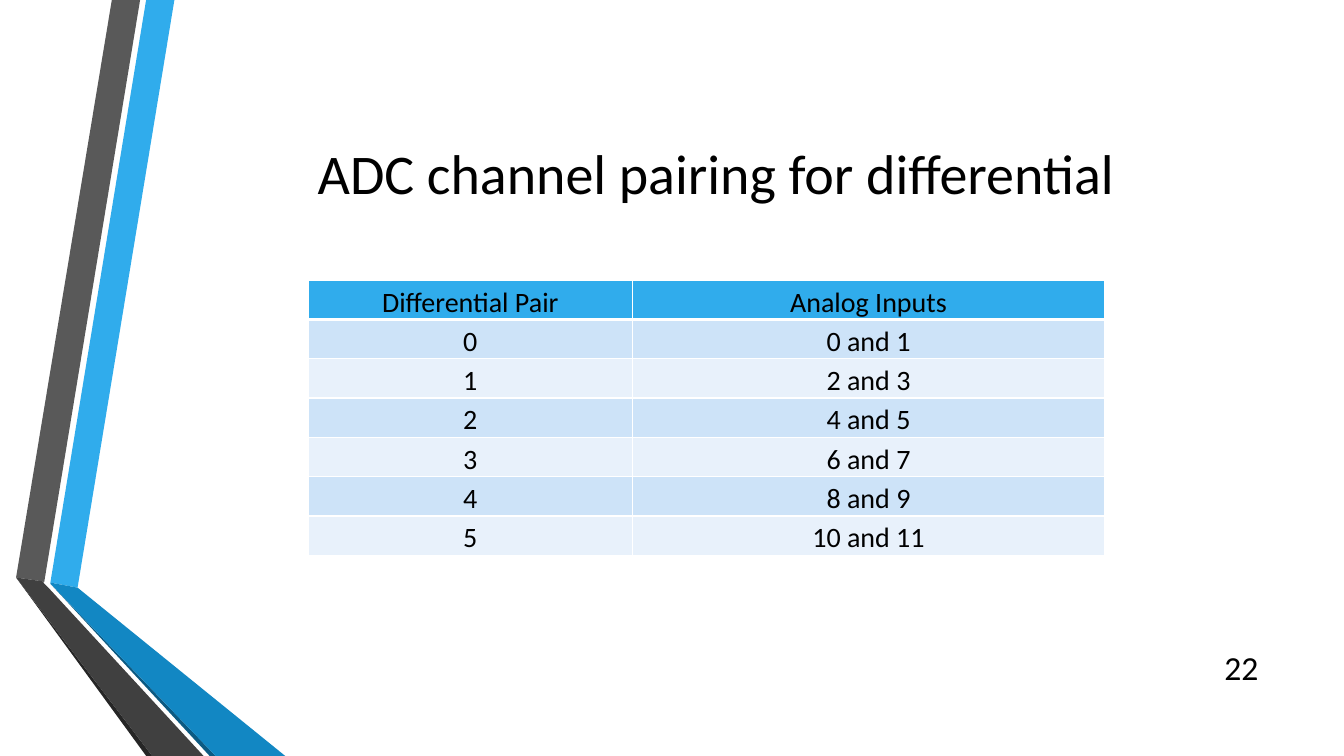
from pptx import Presentation
from pptx.dml.color import RGBColor
from pptx.enum.text import MSO_ANCHOR, PP_ALIGN
from pptx.oxml import parse_xml
from pptx.oxml.ns import nsdecls

PX = 9144
THEME = {
    "font": "Calibri",
    "ink": "000000",
    "line": "FFFFFF",
    "head": "30ACEC",
    "bands": ("CDE3F8", "E8F1FB"),
    "blues": ("30ACEC", "0C5A82", "1287C3"),
    "grays": ("595959", "262626", "404040"),
    "title": 40,
    "number": 24,
    "cell": 20,
}


def write(frame, text, size, align):
    frame.text = text
    para = frame.paragraphs[0]
    para.alignment = align
    font = para.runs[0].font
    font.name = THEME["font"]
    font.size = size * 12700
    font.bold = False
    font.color.rgb = RGBColor.from_string(THEME["ink"])
    return para


def edge(cell, side, points):
    cell._tc.get_or_add_tcPr().append(parse_xml(
        f'<a:ln{side} {nsdecls("a")} w="{points * 12700}"><a:solidFill>'
        f'<a:srgbClr val="{THEME["line"]}"/></a:solidFill></a:ln{side}>'))


deck = Presentation()
deck.slide_width = 1333 * PX
deck.slide_height = 750 * PX
slide = deck.slides.add_slide(deck.slide_layouts[5])
shapes = slide.shapes

blues, grays = THEME["blues"], THEME["grays"]
ribbons = [
    (blues[0], [(50, 578), (77, 583), (173, 0), (145, 0)]),
    (grays[0], [(139, 0), (111, 0), (16, 573), (44, 577)]),
    (grays[1], [(16, 573), (145, 750), (151, 750)]),
    (blues[1], [(50, 579), (208, 750), (214, 750)]),
    (blues[2], [(50, 579), (214, 750), (283, 750), (77, 583), (50, 578)]),
    (grays[2], [(202, 750), (48, 583), (43, 578), (44, 577), (16, 573),
                (151, 750)]),
]
for color, points in ribbons:
    pen = shapes.build_freeform(*points[0], scale=PX)
    pen.add_line_segments(points[1:], close=True)
    ribbon = pen.convert_to_shape()
    ribbon.shadow.inherit = False
    ribbon.fill.solid()
    ribbon.fill.fore_color.rgb = RGBColor.from_string(color)
    ribbon.line.fill.background()

title = shapes.title
shapes._spTree.append(title._element)
title.left, title.top = 162 * PX, 75 * PX
title.width, title.height = 1096 * PX, 192 * PX
title.text_frame.vertical_anchor = MSO_ANCHOR.MIDDLE
write(title.text_frame, "ADC channel pairing for differential",
      THEME["title"], PP_ALIGN.CENTER)

number = shapes.add_textbox(1198 * PX, 642 * PX, 60 * PX, 40 * PX)
number.text_frame.word_wrap = True
number.text_frame.vertical_anchor = MSO_ANCHOR.MIDDLE
write(number.text_frame, "22", THEME["number"], PP_ALIGN.RIGHT)

rows = [("Differential Pair", "Analog Inputs")]
rows += [(str(pair), f"{2 * pair} and {2 * pair + 1}") for pair in range(6)]
widths = (321, 469)
tall = 39
table = shapes.add_table(len(rows), len(widths), 306 * PX, 278 * PX,
                         sum(widths) * PX, tall * len(rows) * PX).table
for column, width in zip(table.columns, widths):
    column.width = width * PX
for i, row in enumerate(rows):
    table.rows[i].height = tall * PX
    color = THEME["bands"][(i - 1) % 2] if i else THEME["head"]
    for j, text in enumerate(row):
        cell = table.cell(i, j)
        cell.margin_left = cell.margin_right = 7 * PX
        cell.margin_top = cell.margin_bottom = 0
        para = write(cell.text_frame, text, THEME["cell"], PP_ALIGN.CENTER)
        para.line_spacing = 1.15
        edge(cell, "L", 1)
        edge(cell, "R", 1)
        edge(cell, "T", 3 if i == 1 else 1)
        edge(cell, "B", 3 if i == 0 else 1)
        cell.fill.solid()
        cell.fill.fore_color.rgb = RGBColor.from_string(color)

deck.save("out.pptx")
